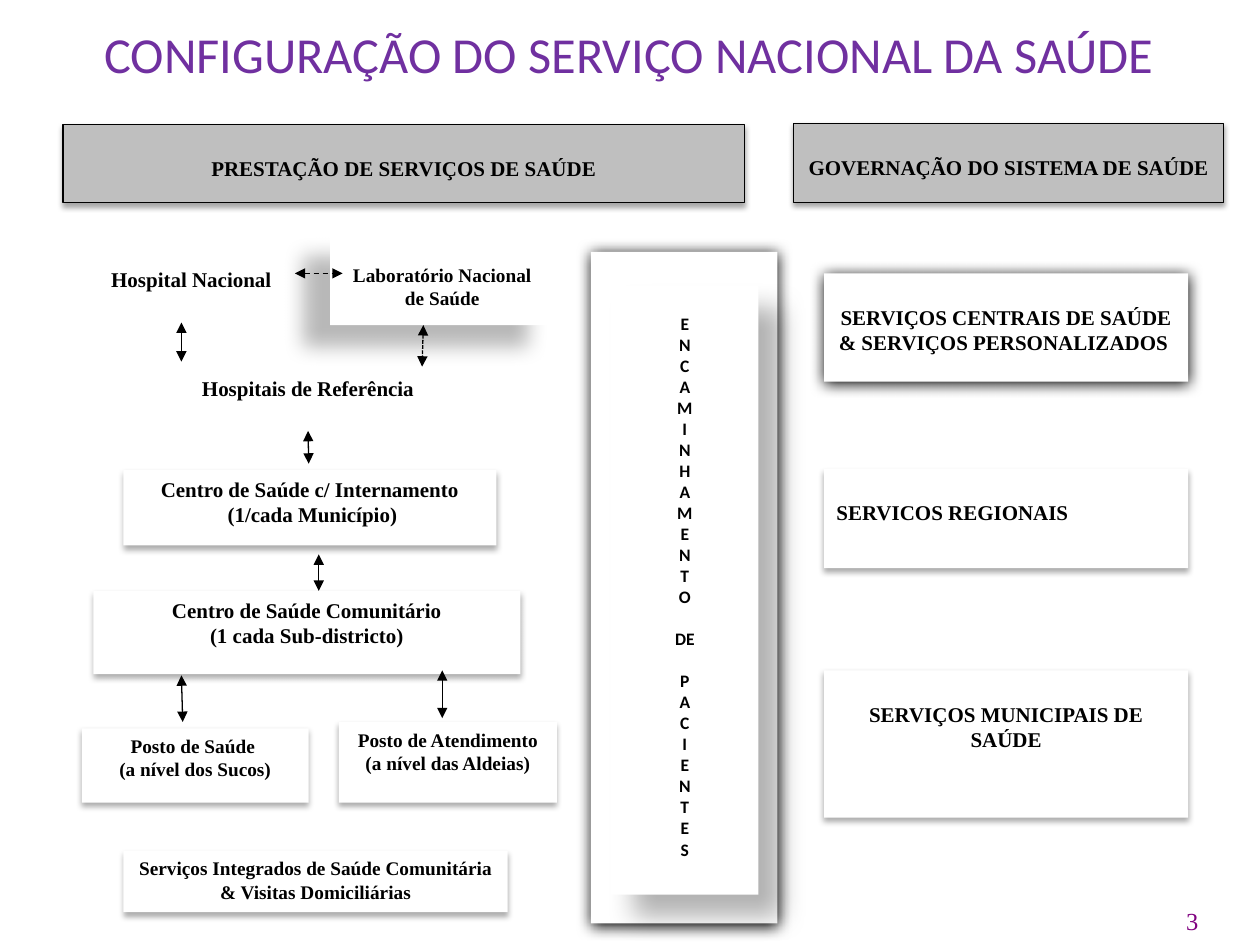
from lxml.etree import SubElement
from pptx import Presentation
from pptx.dml.color import RGBColor
from pptx.enum.dml import MSO_LINE_DASH_STYLE as Dash
from pptx.enum.shapes import MSO_CONNECTOR as Connector, MSO_SHAPE as Shape
from pptx.enum.text import MSO_ANCHOR as Anchor, PP_ALIGN as Align
from pptx.oxml.ns import qn
from pptx.util import Inches, Pt

COLORS = {
    "black": "000000",
    "white": "FFFFFF",
    "header": "BFBFBF",
    "title": "7030A0",
    "number": "800080",
}
SERIF, SANS = "Times New Roman", "Calibri"
SHADOWS = {
    "soft": (32, 3.5, 2.2, 90),
    "strong": (100, 8.5, 1, 90),
    "header": (35, 3.1, 1.8, 90),
    "column": (30, 15, 18, 45),
    "laboratory": (28, 11.8, 19.7, 141),
}

deck = Presentation()
deck.slide_width, deck.slide_height = Inches(10), Inches(7.5)
COLUMN, ROW = deck.slide_width / 100, deck.slide_height / 75
page = deck.slides.add_slide(deck.slide_layouts[5])


def grid(left, top, width, height):
    return [int(left * COLUMN), int(top * ROW), int(width * COLUMN), int(height * ROW)]


def write(box, text, size, font=SERIF, color="black", bold=True, align=Align.CENTER):
    frame = box.text_frame
    frame.word_wrap = True
    frame.text = text
    for para in frame.paragraphs:
        para.alignment = align
        for span in para.runs:
            span.font.size = Pt(size)
            span.font.name = font
            span.font.bold = bold
            span.font.color.rgb = RGBColor.from_string(COLORS[color])


title = page.shapes.title
title.left, title.top, title.width, title.height = grid(1, 1.5, 97.9, 5.4)
write(title, "CONFIGURAÇÃO DO SERVIÇO NACIONAL DA SAÚDE", 28.8, SANS, "title", False)
title.text_frame.vertical_anchor = Anchor.MIDDLE

number = page.shapes.add_textbox(*grid(72.1, 69.7, 24, 5))
write(number, "3", 14, color="number", bold=False, align=Align.RIGHT)
number.text_frame.vertical_anchor = Anchor.BOTTOM

letters = "\n".join([*"ENCAMINHAMENTO", "DE", *"PACIENTES"])
RIGHT, RIGHT_WIDTH = 65.4, 28.9
boxes = [
    ("hospital", (6.4, 18.7, 18, 6.8), "Hospital Nacional ", 12, None, 1),
    ("referral", (7.5, 29.3, 33.9, 4.9), "Hospitais de Referência", 12, None, 0),
    ("inpatient", (9.8, 37.3, 29.6, 6),
     "Centro de Saúde c/ Internamento\n (1/cada Município)", 12, "soft", 0),
    ("community", (7.4, 46.9, 33.9, 6.6),
     "Centro de Saúde Comunitário\n(1 cada Sub-districto)", 12, "soft", 0),
    ("health post", (6.5, 57.8, 18, 5.9),
     "Posto de Saúde \n(a nível dos Sucos)", 11, "soft", 0),
    ("village post", (26.9, 57.3, 17.3, 6.4),
     "Posto de Atendimento\n(a nível das Aldeias)", 11, "soft", 0),
    ("home visits", (9.8, 67.5, 30.5, 4.9),
     "Serviços Integrados de Saúde Comunitária & Visitas Domiciliárias", 11, "soft", 0),
    ("panel", (46.9, 20, 14.8, 53.3), "", 10, "strong", 0),
    ("patient flow", (48.5, 22.7, 11.7, 48.3), letters, 10, "column", 1),
    ("central", (RIGHT, 21.7, RIGHT_WIDTH, 8.6),
     "SERVIÇOS CENTRAIS DE SAÚDE & SERVIÇOS PERSONALIZADOS ", 12, "strong", 1),
    ("regional", (RIGHT, 37.2, RIGHT_WIDTH, 7.9), "SERVICOS REGIONAIS", 12, "soft", 1),
    ("municipal", (RIGHT, 53.2, RIGHT_WIDTH, 11.7),
     "SERVIÇOS MUNICIPAIS DE SAÚDE", 12, "soft", 1),
    ("laboratory", (26.2, 18.6, 17.8, 7.2),
     "Laboratório Nacional de Saúde", 11, "laboratory", 1),
    ("delivery", (5, 9.9, 54.1, 6.2), "PRESTAÇÃO DE SERVIÇOS DE SAÚDE", 12, "header", 1),
    ("governance", (63, 9.8, 34.1, 6.3), "GOVERNAÇÃO DO SISTEMA DE SAÚDE", 12, "header", 1),
]

placed = {}
for name, area, text, size, shadow, lines_above in boxes:
    box = page.shapes.add_shape(Shape.RECTANGLE, *grid(*area))
    placed[name] = box
    box.fill.solid()
    is_header = shadow == "header"
    box.fill.fore_color.rgb = RGBColor.from_string(COLORS["header" if is_header else "white"])
    if is_header:
        box.line.color.rgb = RGBColor.from_string(COLORS["black"])
        box.line.width = Pt(0.75)
    else:
        box.line.fill.background()
    box.shadow.inherit = False
    if shadow:
        alpha, blur, distance, angle = SHADOWS[shadow]
        effects = box._element.spPr.find(qn("a:effectLst"))
        outer = SubElement(effects, qn("a:outerShdw"), blurRad=str(Pt(blur)),
                           dist=str(Pt(distance)), dir=str(angle * 60000),
                           algn="ctr", rotWithShape="0")
        tint = SubElement(outer, qn("a:srgbClr"), val=COLORS["black"])
        SubElement(tint, qn("a:alpha"), val=str(alpha * 1000))
    if text:
        write(box, text, size, SANS if name == "patient flow" else SERIF,
              align=Align.LEFT if name == "regional" else Align.CENTER)
    box.text_frame.vertical_anchor = Anchor.TOP
    box.text_frame.margin_top = Inches(0.05) + Pt(size * 1.17 * lines_above)

flow = placed["patient flow"].text_frame.paragraphs
for para in flow[14:16]:
    para.space_before = Pt(12)

arrows = [
    ((35.1, 53.2), (35.1, 57), None, None),
    ((24.5, 34.2), (24.5, 36.8), None, "referral"),
    ((14.4, 25.6), (14.4, 28.7), None, None),
    ((33.6, 25.8), (33.5, 29.1), Dash.SQUARE_DOT, None),
    ((23.4, 21.7), (27.2, 21.7), Dash.DASH, None),
    ((25.3, 44), (25.3, 46.9), None, None),
    ((14.4, 53.6), (14.5, 57.3), None, None),
]
for start, end, dash, source in arrows:
    arrow = page.shapes.add_connector(Connector.STRAIGHT, *grid(*start, *end))
    if source:
        arrow.begin_connect(placed[source], 2)
    arrow.line.color.rgb = RGBColor.from_string(COLORS["black"])
    arrow.line.width = Pt(0.75)
    if dash:
        arrow.line.dash_style = dash
    stroke = arrow.line._get_or_add_ln()
    for tip in ("a:headEnd", "a:tailEnd"):
        SubElement(stroke, qn(tip), type="triangle")
    SubElement(arrow._element.spPr, qn("a:effectLst"))

deck.save("out.pptx")
